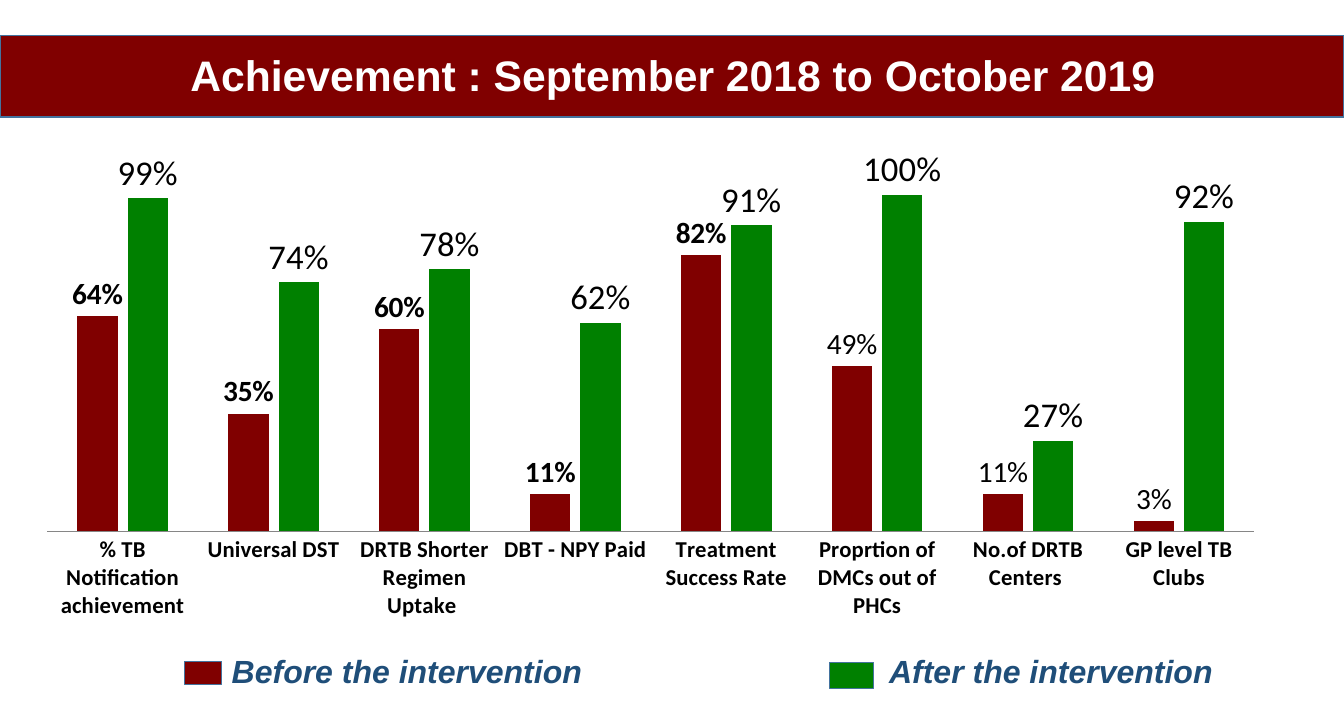
"""Build the slide on achievements before and after the intervention."""
from lxml.etree import SubElement
from pptx import Presentation
from pptx.chart.data import CategoryChartData
from pptx.dml.color import RGBColor
from pptx.enum.chart import XL_CHART_TYPE, XL_LABEL_POSITION, XL_TICK_MARK
from pptx.enum.shapes import MSO_SHAPE
from pptx.enum.text import MSO_AUTO_SIZE, PP_ALIGN
from pptx.oxml.ns import qn
from pptx.util import Inches, Pt

RED, GREEN, NAVY = "800000", "008000", "1F4E79"


def paint(item, color):
    item.solid()
    item.fore_color.rgb = RGBColor.from_string(color)


def write(text, box, size=24, color=NAVY, italic=True, align=PP_ALIGN.RIGHT):
    frame = slide.shapes.add_textbox(*map(Inches, box)).text_frame
    frame.word_wrap = True
    frame.auto_size = MSO_AUTO_SIZE.SHAPE_TO_FIT_TEXT
    line = frame.paragraphs[0]
    line.alignment = align
    run = line.add_run()
    run.text = text
    font = run.font
    font.name, font.size = "Arial", Pt(size)
    font.bold, font.italic = True, italic
    paint(font.fill, color)


deck = Presentation()
deck.slide_width, deck.slide_height = Inches(14), Inches(7.5)
slide = deck.slides.add_slide(deck.slide_layouts[6])

rects = [
    ((0, 0.37, 14, 0.85), RED),
    ((1.92, 6.89, 0.39, 0.24), RED),
    ((8.64, 6.9, 0.46, 0.27), GREEN),
]
for box, color in rects:
    rect = slide.shapes.add_shape(MSO_SHAPE.RECTANGLE, *map(Inches, box))
    rect.shadow.inherit = False
    paint(rect.fill, color)
    paint(rect.line.fill, "43739E")
    rect.line.width = Pt(1)

write("Achievement : September 2018 to October 2019", (0.27, 0.46, 13.49, 0.64),
      size=32, color="FFFFFF", italic=False, align=PP_ALIGN.CENTER)

data = CategoryChartData(number_format='0"%"')
data.categories = [
    "% TB Notification achievement", "Universal DST",
    "DRTB Shorter Regimen Uptake ", "DBT - NPY Paid",
    "Treatment Success Rate", "Proprtion of DMCs out of PHCs",
    "No.of DRTB Centers ", "GP level TB Clubs",
]
data.add_series("Series 1", (64, 35, 60, 11, 82, 49, 11, 3))
data.add_series("Series 2", (99, 74, 78, 62, 91, 100, 27, 92))
box = map(Inches, (0.23, 1.22, 13.1, 5.33))
chart = slide.shapes.add_chart(XL_CHART_TYPE.COLUMN_CLUSTERED, *box, data).chart
chart.has_legend = chart.has_title = False
chart.font.name, chart.font.size = "Calibri", Pt(18)
paint(chart.font.fill, "000000")

axis = chart.category_axis
axis.major_tick_mark = XL_TICK_MARK.NONE
axis.tick_labels.font.size = Pt(17)
axis.tick_labels.font.bold = True
paint(axis.format.line.fill, "868686")
scale = chart.value_axis
scale.visible = scale.has_major_gridlines = False
scale.minimum_scale, scale.maximum_scale = 0, 120

plot = chart.plots[0]
plot.gap_width, plot.overlap = 150, -25
plot.vary_by_categories = False
for series, color, size, bold in zip(plot.series, (RED, GREEN), (22, 26), (True, False)):
    paint(series.format.fill, color)
    labels = series.data_labels
    labels.show_value = True
    labels.number_format, labels.number_format_is_linked = '0"%"', False
    labels.position = XL_LABEL_POSITION.OUTSIDE_END
    labels.font.size, labels.font.bold = Pt(size), bold
    paint(labels.font.fill, "000000")

for index in range(5, 8):
    label = plot.series[0].points[index].data_label
    label.font.size, label.font.bold = Pt(22), False
    paint(label.font.fill, "000000")
    label.position = XL_LABEL_POSITION.OUTSIDE_END

area = chart.element.find(".//" + qn("c:plotArea"))
for old in area.findall(qn("c:layout")):
    area.remove(old)
layout = SubElement(area, qn("c:layout"))
area.insert(0, layout)
manual = SubElement(layout, qn("c:manualLayout"))
parts = [("layoutTarget", "inner"), ("xMode", "edge"), ("yMode", "edge"),
         ("x", "0.02"), ("y", "0.02"), ("w", "0.96"), ("h", "0.79")]
for name, value in parts:
    SubElement(manual, qn("c:" + name)).set("val", value)

for text, left in (("Before the intervention", 1.79), ("After the intervention", 8.36)):
    write(text, (left, 6.74, 4.37, 0.5))

deck.save("out.pptx")
